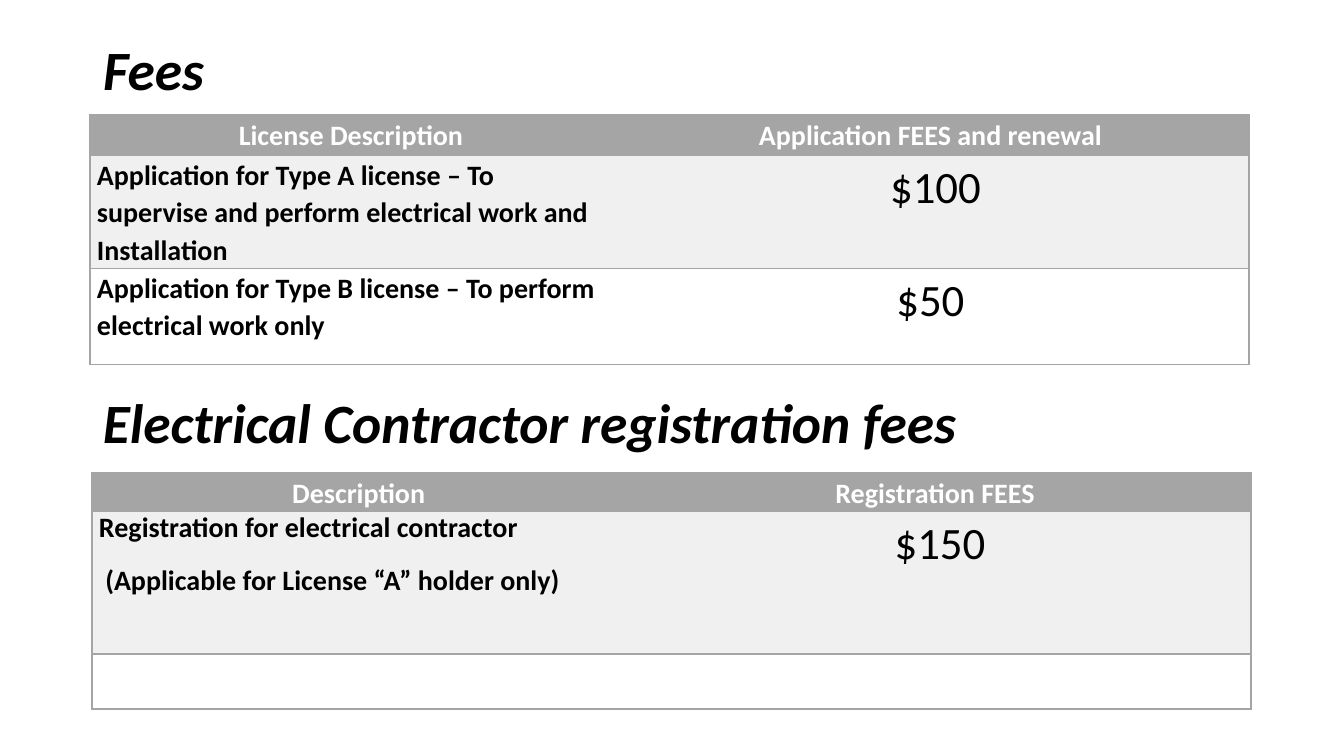
import dataclasses

import lxml.etree
import pptx
import pptx.dml.color
import pptx.enum.text
import pptx.oxml.ns
import pptx.util

EMU_PER_PX = 914400 / 100.8
ALIGN = pptx.enum.text.PP_ALIGN


@dataclasses.dataclass(frozen=True)
class Theme:
    """Colours, font and type sizes of the slide."""
    font: str = "Calibri"
    black: str = "000000"
    white: str = "FFFFFF"
    grey: str = "A5A5A5"
    band: str = "F0F0F0"
    heading: float = 39.6
    label: float = 20
    price: float = 32
    space_after: float = 13.2
    plain_table: str = "{2D5ABB26-0587-4C30-8999-92F81FD0307C}"


THEME = Theme()


def px(length):
    """Turn a length in px into EMU."""
    return pptx.util.Emu(round(length * EMU_PER_PX))


def place(box):
    """Turn a box in px into EMU."""
    return [px(length) for length in box]


def add_span(para, text, size, color, bold=True, italic=False):
    """Add one formatted run to a paragraph."""
    span = para.add_run()
    span.text = text
    span.font.name = THEME.font
    span.font.size = pptx.util.Pt(size)
    span.font.bold = bold
    span.font.italic = italic
    span.font.color.rgb = pptx.dml.color.RGBColor.from_string(color)


def write_heading(shape, box, text, line_spacing):
    """Place a section heading in its box."""
    shape.left, shape.top, shape.width, shape.height = place(box)
    frame = shape.text_frame
    frame.word_wrap = True
    frame.auto_size = pptx.enum.text.MSO_AUTO_SIZE.NONE
    frame.vertical_anchor = pptx.enum.text.MSO_ANCHOR.MIDDLE
    para = frame.paragraphs[0]
    para.alignment = ALIGN.LEFT
    para.line_spacing = line_spacing
    add_span(para, text, THEME.heading, THEME.black, italic=True)


def add_borders(cell, sides):
    """Draw thin grey lines on the given sides of a cell."""
    properties = cell._tc.get_or_add_tcPr()
    for side in sides:
        line = lxml.etree.SubElement(properties, pptx.oxml.ns.qn(f"a:ln{side}"), w="12700")
        fill = lxml.etree.SubElement(line, pptx.oxml.ns.qn("a:solidFill"))
        lxml.etree.SubElement(fill, pptx.oxml.ns.qn("a:srgbClr"), val=THEME.grey)


def write_cell(cell, lines, size, color, bold, alignment):
    """Fill a cell with one paragraph per line."""
    cell.margin_left = cell.margin_right = px(7)
    cell.margin_top = cell.margin_bottom = 0
    for index, text in enumerate(lines):
        para = cell.text_frame.paragraphs[0] if index == 0 else cell.text_frame.add_paragraph()
        para.alignment = alignment
        para.line_spacing = 1.1 if len(lines) == 1 else 1.0
        para.space_after = pptx.util.Pt(THEME.space_after)
        add_span(para, text, size, color, bold)


def add_fee_table(page, box, split, heights, rows):
    """Add a table of descriptions and fees, its columns parted at split."""
    table = page.shapes.add_table(len(rows), 2, *place(box)).table
    table._tbl.tblPr.find(pptx.oxml.ns.qn("a:tableStyleId")).text = THEME.plain_table
    for column, width in zip(table.columns, (split, box[2] - split)):
        column.width = px(width)
    fills = (THEME.grey, THEME.band, THEME.white)
    for row, height, fill, contents in zip(table.rows, heights, fills, rows):
        row.height = px(height)
        header = fill == THEME.grey
        for column, (cell, lines) in enumerate(zip(row.cells, contents)):
            add_borders(cell, ("L", "T", "B") if column == 0 else ("R", "T", "B"))
            cell.fill.solid()
            cell.fill.fore_color.rgb = pptx.dml.color.RGBColor.from_string(fill)
            price = column == 1 and not header
            write_cell(
                cell, lines,
                THEME.price if price else THEME.label,
                THEME.white if header else THEME.black,
                not price,
                ALIGN.CENTER if header or column == 1 else ALIGN.LEFT,
            )


def build_fees_slide(deck):
    """Build the slide with license and contractor fees."""
    page = deck.slides.add_slide(deck.slide_layouts[5])
    write_heading(page.shapes.title, (93, 40, 1159, 65), "Fees", 0.9)
    add_fee_table(page, (90, 115, 1159, 249), 522, (40, 113, 96), (
        (["License Description"], ["Application FEES and renewal"]),
        (["Application for Type A license – To supervise and perform "
          "electrical work and Installation"], [" $100"]),
        (["Application for Type B license – To perform electrical work only"], ["$50"]),
    ))
    box = (93, 397, 1159, 65)
    heading = page.shapes.add_textbox(*place(box))
    write_heading(heading, box, "Electrical Contractor registration fees", 0.7)
    add_fee_table(page, (92, 473, 1159, 236), 527, (38, 143, 55), (
        ([" Description"], ["Registration FEES"]),
        (["Registration for electrical contractor",
          " (Applicable for License “A” holder only)"], [" $150"]),
        ([], []),
    ))


def main():
    """Create the deck and save it."""
    deck = pptx.Presentation()
    deck.slide_width, deck.slide_height = px(1344), px(756)
    build_fees_slide(deck)
    deck.save("out.pptx")


if __name__ == "__main__":
    main()
